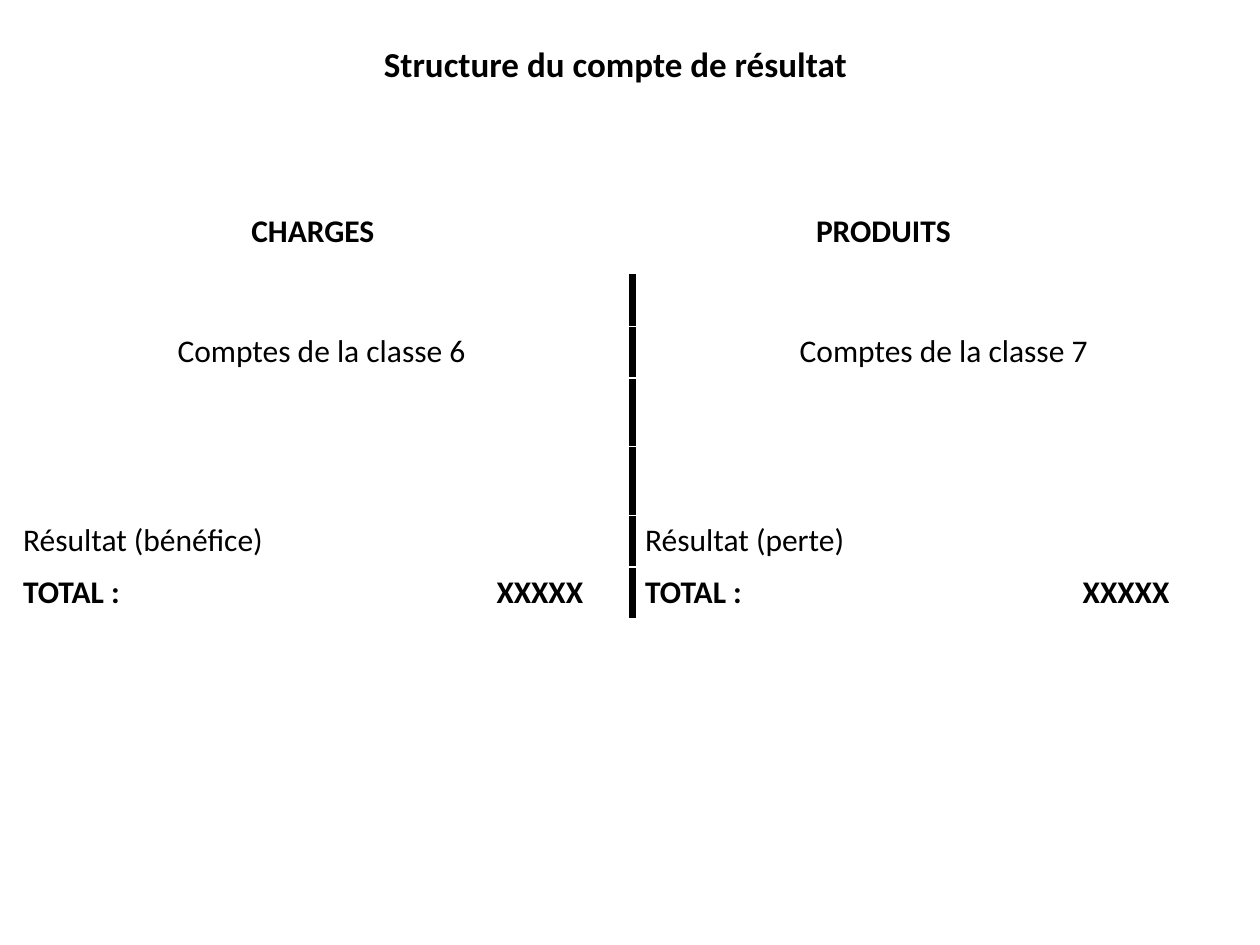
from lxml.etree import SubElement as Sub
from pptx import Presentation
from pptx.dml.color import RGBColor as Rgb
from pptx.enum.text import MSO_AUTO_SIZE as Fit, PP_ALIGN as Align
from pptx.oxml import parse_xml as to_xml
from pptx.oxml.ns import nsdecls, qn
from pptx.util import Pt

COLORS = {"ink": "000000", "back": "FFFFFF"}


class Page:
    font = "Calibri"
    size = 18
    rule = 4.5

    def __init__(self, deck):
        self.slide = deck.slides.add_slide(deck.slide_layouts[6])
        fill = self.slide.background.fill
        fill.solid()
        fill.fore_color.rgb = Rgb.from_string(COLORS["back"])

    def put(self, para, text, size=None, bold=False, align=Align.LEFT):
        para.text = text
        para.alignment = align
        font = para.font
        font.name = self.font
        font.size = Pt(size or self.size)
        font.bold = bold
        font.color.rgb = Rgb.from_string(COLORS["ink"])

    def label(self, text, left, top, width, height, size=None):
        box = self.slide.shapes.add_textbox(Pt(left), Pt(top), Pt(width), Pt(height))
        frame = box.text_frame
        frame.word_wrap = True
        frame.auto_size = Fit.SHAPE_TO_FIT_TEXT
        self.put(frame.paragraphs[0], text, size, True, Align.CENTER)

    def tab(self, para, pos):
        stops = to_xml(f"<a:tabLst {nsdecls('a')}/>")
        Sub(stops, qn("a:tab"), pos=str(Pt(pos)), algn="l")
        para._p.get_or_add_pPr().insert(0, stops)

    def border(self, cell, side):
        line = to_xml(f'<a:{side} {nsdecls("a")} w="{Pt(self.rule)}"/>')
        fill = Sub(line, qn("a:solidFill"))
        Sub(fill, qn("a:srgbClr"), val=COLORS["ink"])
        cell._tc.get_or_add_tcPr().insert(0, line)

    def account(self, left, top, width, rows, sides):
        shape = self.slide.shapes.add_table(
            len(rows), len(sides), Pt(left), Pt(top), Pt(width), Pt(sum(rows)))
        table = shape.table
        table.first_row = table.horz_banding = False
        for row, height in zip(table.rows, rows):
            row.height = Pt(height)
        for col, (edge, stop, group, result) in enumerate(sides):
            table.columns[col].width = Pt(width / len(sides))
            for row in range(len(rows)):
                cell = table.cell(row, col)
                cell.fill.background()
                self.border(cell, edge)
            lines = {1: (group, False, Align.CENTER),
                     4: (result, False, Align.LEFT),
                     5: ("TOTAL :\tXXXXX", True, Align.LEFT)}
            for row, (text, bold, align) in lines.items():
                para = table.cell(row, col).text_frame.paragraphs[0]
                self.put(para, text, bold=bold, align=align)
            self.tab(para, stop)


def main():
    deck = Presentation()
    deck.slide_width, deck.slide_height = Pt(720), Pt(540)
    page = Page(deck)
    page.label("Structure du compte de résultat", 54, 21, 595.5, 31.5, 20)
    page.account(6, 157, 711, [29.5, 29.5, 39.25, 39.25, 29.5, 29.5], [
        ("lnR", 270.5, "Comptes de la classe 6", "Résultat (bénéfice)"),
        ("lnL", 250, "Comptes de la classe 7", "Résultat (perte)"),
    ])
    page.label("CHARGES", 105, 117, 147.5, 29)
    page.label("PRODUITS", 417, 117, 175.5, 29)
    deck.save("out.pptx")


if __name__ == "__main__":
    main()
